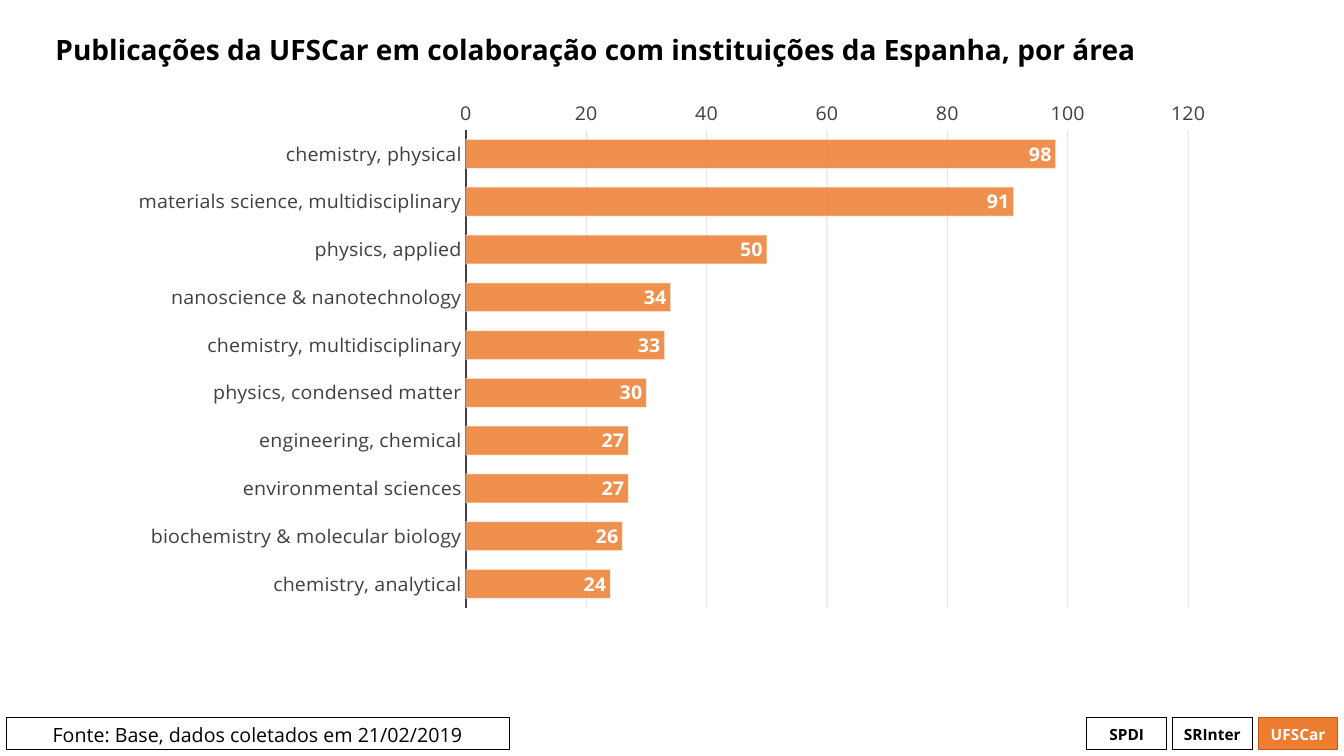
from lxml import etree
from pptx import Presentation
from pptx.chart.data import CategoryChartData
from pptx.dml.color import RGBColor
from pptx.enum.chart import XL_AXIS_CROSSES, XL_CHART_TYPE, XL_LABEL_POSITION, XL_TICK_MARK
from pptx.enum.shapes import MSO_SHAPE
from pptx.enum.text import MSO_ANCHOR, PP_ALIGN
from pptx.oxml.ns import qn
from pptx.util import Inches, Pt

FONT = "Open Sans"
BLACK = RGBColor(0x00, 0x00, 0x00)
WHITE = RGBColor(0xFF, 0xFF, 0xFF)
GRAY = RGBColor(0x40, 0x40, 0x40)
GRID = RGBColor(0x0D, 0x0D, 0x0D)
ORANGE = RGBColor(0xED, 0x7D, 0x31)
DARK_ORANGE = RGBColor(0xC5, 0x5A, 0x11)

PUBLICATIONS = {
    "chemistry, physical": 98,
    "materials science, multidisciplinary": 91,
    "physics, applied": 50,
    "nanoscience & nanotechnology": 34,
    "chemistry, multidisciplinary": 33,
    "physics, condensed matter": 30,
    "engineering, chemical": 27,
    "environmental sciences": 27,
    "biochemistry & molecular biology": 26,
    "chemistry, analytical": 24,
}


def format_font(font, size=14, color=BLACK, bold=False):
    font.name, font.size, font.bold = FONT, Pt(size), bold
    font.color.rgb = color


def write_text(shape, text, align=PP_ALIGN.CENTER, anchor=MSO_ANCHOR.MIDDLE,
               line_spacing=None, **font_format):
    frame = shape.text_frame
    frame.word_wrap = True
    frame.vertical_anchor = anchor
    paragraph = frame.paragraphs[0]
    paragraph.alignment, paragraph.line_spacing = align, line_spacing
    run = paragraph.add_run()
    run.text = text
    format_font(run.font, **font_format)


def set_alpha(color_format_parent, percent):
    """Make every solid colour below the given element translucent."""
    for color in color_format_parent.iter(qn("a:srgbClr")):
        etree.SubElement(color, qn("a:alpha")).set("val", str(percent * 1000))


def add_title(slide, left, top, width, height):
    title = slide.shapes.title
    title.left, title.top = Inches(left), Inches(top)
    title.width, title.height = Inches(width), Inches(height)
    write_text(title, "Publicações da UFSCar em colaboração com instituições da Espanha, por área",
               align=PP_ALIGN.LEFT, line_spacing=0.9, size=20, bold=True)


def set_plot_area(chart, **shares):
    """Fix the inner plot area as shares of the chart's size."""
    plot_area = chart._chartSpace.chart.plotArea
    for old_layout in plot_area.findall(qn("c:layout")):
        plot_area.remove(old_layout)
    layout = etree.Element(qn("c:layout"))
    manual = etree.SubElement(layout, qn("c:manualLayout"))
    settings = {"layoutTarget": "inner", "xMode": "edge", "yMode": "edge", **shares}
    for name, value in settings.items():
        etree.SubElement(manual, qn(f"c:{name}")).set("val", str(value))
    plot_area.insert(0, layout)


def format_axes(chart):
    areas, counts = chart.category_axis, chart.value_axis
    for axis in (areas, counts):
        axis.major_tick_mark = axis.minor_tick_mark = XL_TICK_MARK.NONE
        format_font(axis.tick_labels.font, color=GRAY)
    # The first area is on top, the value scale at the bottom
    areas.reverse_order = True
    areas.crosses = XL_AXIS_CROSSES.MAXIMUM
    areas.has_major_gridlines = False
    areas.format.line.color.rgb = GRAY
    areas.format.line.width = Pt(1.5)
    counts.minimum_scale, counts.maximum_scale, counts.major_unit = 0, 120, 20
    counts.format.line.fill.background()
    gridline = counts.major_gridlines.format.line
    gridline.color.rgb, gridline.width = GRID, Pt(0.75)
    set_alpha(counts.major_gridlines._xAx.find(qn("c:majorGridlines")), 10)


def format_bars(plot):
    plot.gap_width = 65
    plot.vary_by_categories = False
    bars = plot.series[0]
    bars.format.fill.solid()
    bars.format.fill.fore_color.rgb = ORANGE
    set_alpha(bars._element.spPr, 85)
    bars.format.line.color.rgb, bars.format.line.width = WHITE, Pt(0.75)
    set_alpha(bars._element.spPr.find(qn("a:ln")), 50)
    labels = bars.data_labels
    labels.show_value = True
    labels.position = XL_LABEL_POSITION.INSIDE_END
    format_font(labels.font, color=WHITE, bold=True)


def add_publications_chart(slide, left, top, width, height):
    data = CategoryChartData()
    data.categories = list(PUBLICATIONS)
    data.add_series("Series 1", list(PUBLICATIONS.values()))
    frame = slide.shapes.add_chart(XL_CHART_TYPE.BAR_CLUSTERED, Inches(left), Inches(top),
                                   Inches(width), Inches(height), data)
    chart = frame.chart
    chart.has_legend = chart.has_title = False
    format_font(chart.font)
    format_axes(chart)
    format_bars(chart.plots[0])
    set_plot_area(chart, x=0.315, y=0.022, w=0.65, h=0.89)


def add_box(slide, text, left, top, width, height, fill=None, line=BLACK, **text_format):
    box = slide.shapes.add_shape(MSO_SHAPE.RECTANGLE, Inches(left), Inches(top),
                                 Inches(width), Inches(height))
    box.shadow.inherit = False
    if fill is None:
        box.fill.background()
    else:
        box.fill.solid()
        box.fill.fore_color.rgb = fill
    box.line.color.rgb, box.line.width = line, Pt(0.75)
    # Narrow side margins keep the short names on one line
    box.text_frame.margin_left = box.text_frame.margin_right = Inches(0.05)
    write_text(box, text, **text_format)


def add_footer(slide, left, top, width, height):
    # Source note
    add_box(slide, "Fonte: Base, dados coletados em 21/02/2019", left, top, 4.99, height,
            anchor=MSO_ANCHOR.TOP)
    # Tags, aligned to the right end of the footer
    tag_width, pitch = 0.79, 0.85
    tags = [("SPDI", {}), ("SRInter", {}),
            ("UFSCar", {"fill": ORANGE, "line": DARK_ORANGE, "color": WHITE})]
    first_left = left + width - tag_width - pitch * (len(tags) - 1)
    for index, (name, look) in enumerate(tags):
        add_box(slide, name, first_left + pitch * index, top, tag_width, height,
                size=11, bold=True, **look)


def main():
    presentation = Presentation()
    presentation.slide_width, presentation.slide_height = Inches(13.33), Inches(7.5)
    slide = presentation.slides.add_slide(presentation.slide_layouts[5])
    add_footer(slide, 0.06, 7.12, 13.21, 0.32)
    add_title(slide, 0.45, 0.06, 12.41, 0.91)
    add_publications_chart(slide, 1.15, 0.99, 11.02, 5.51)
    presentation.save("out.pptx")


if __name__ == "__main__":
    main()
